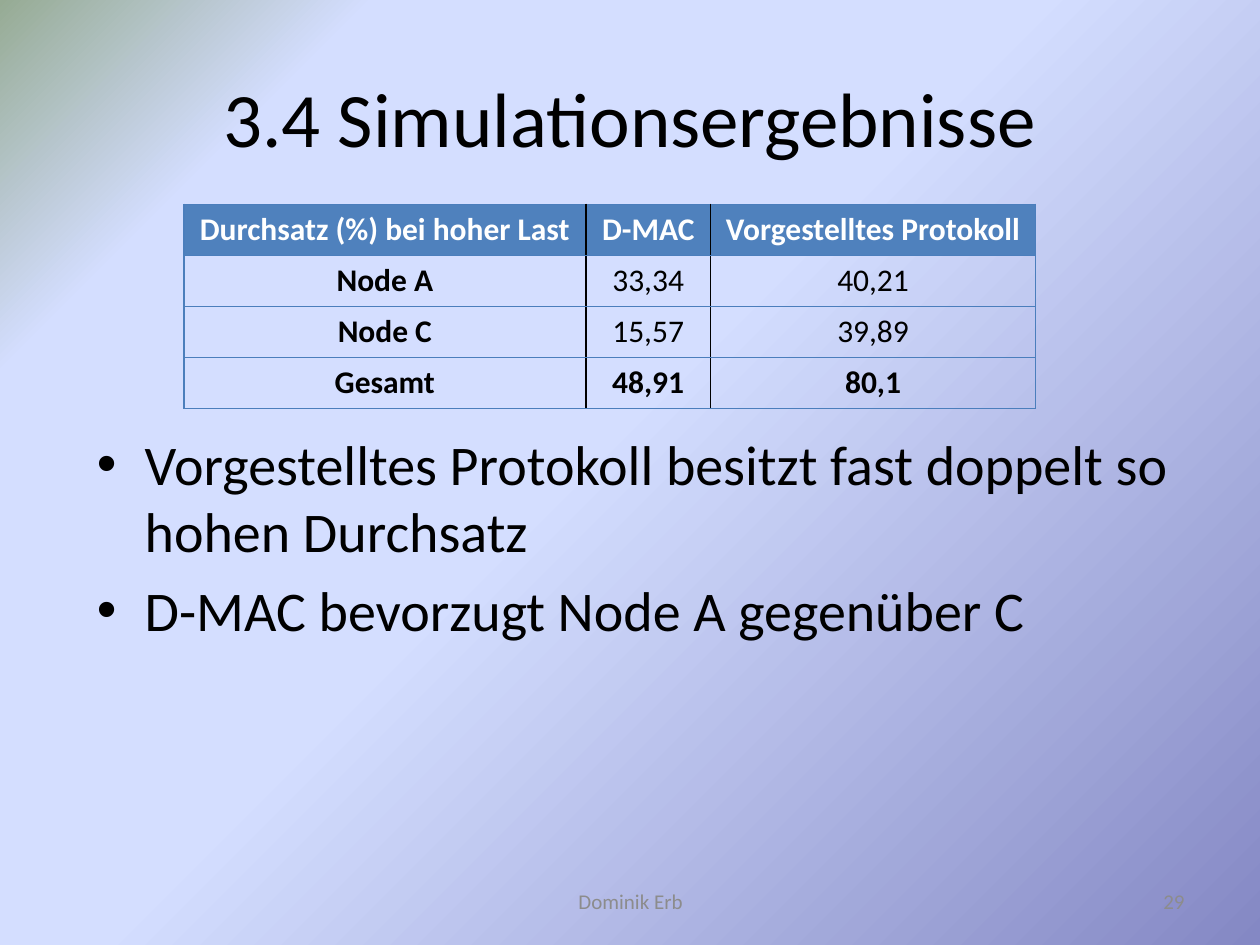
"""Build the slide with the simulation results table and its conclusions."""
from pptx import Presentation
from pptx.dml.color import RGBColor
from pptx.enum.text import MSO_ANCHOR, PP_ALIGN
from pptx.oxml import parse_xml
from pptx.oxml.ns import nsdecls
from pptx.util import Inches, Pt

BLACK = RGBColor(0x00, 0x00, 0x00)
WHITE = RGBColor(0xFF, 0xFF, 0xFF)
GRAY = RGBColor(0x8C, 0x8C, 0x8C)
HEADER_BLUE = RGBColor(0x4F, 0x81, 0xBD)
BORDER_BLUE = RGBColor(0x4B, 0x7E, 0xBC)
GRADIENT = [
    (0, RGBColor(0x84, 0x88, 0xC4)),
    (53, RGBColor(0xD4, 0xDE, 0xFF)),
    (83, RGBColor(0xD4, 0xDE, 0xFF)),
    (100, RGBColor(0x96, 0xAB, 0x94)),
]


def style(paragraph, size, color, alignment, bold=False):
    paragraph.alignment = alignment
    paragraph.font.name = "Calibri"
    paragraph.font.size = Pt(size)
    paragraph.font.color.rgb = color
    paragraph.font.bold = bold


def add_text(slide, box, lines, size, color, alignment, anchor):
    shape = slide.shapes.add_textbox(*[Inches(value) for value in box])
    frame = shape.text_frame
    frame.word_wrap = True
    frame.vertical_anchor = anchor
    frame.text = "\n".join(lines)
    for paragraph in frame.paragraphs:
        style(paragraph, size, color, alignment)
    return frame


presentation = Presentation()
presentation.slide_width = Inches(10)
presentation.slide_height = Inches(7.5)
slide = presentation.slides.add_slide(presentation.slide_layouts[6])

stops = "".join(
    f'<a:gs pos="{position * 1000}"><a:srgbClr val="{color}"/></a:gs>'
    for position, color in GRADIENT
)
background = parse_xml(
    f'<p:bg {nsdecls("p", "a")}><p:bgPr><a:gradFill rotWithShape="1">'
    f"<a:gsLst>{stops}</a:gsLst>"
    '<a:path path="circle"><a:fillToRect l="100000" t="100000"/></a:path>'
    "</a:gradFill><a:effectLst/></p:bgPr></p:bg>"
)
slide.element.cSld.insert(0, background)

add_text(slide, (0.5, 0.3, 9, 1.25), ["3.4 Simulationsergebnisse"],
         44, BLACK, PP_ALIGN.CENTER, MSO_ANCHOR.MIDDLE)

rows = [
    ("Durchsatz (%) bei hoher Last", "D-MAC", "Vorgestelltes Protokoll"),
    ("Node A", "33,34", "40,21"),
    ("Node C", "15,57", "39,89"),
    ("Gesamt", "48,91", "80,1"),
]
widths = [3.19, 0.99, 2.58]
last_row, last_column = len(rows) - 1, len(widths) - 1
table = slide.shapes.add_table(
    len(rows), len(widths), Inches(1.46), Inches(1.62),
    Inches(sum(widths)), Inches(1.62),
).table
table.horz_banding = False
for column, width in zip(table.columns, widths):
    column.width = Inches(width)

for row_index, row in enumerate(rows):
    for column_index, value in enumerate(row):
        cell = table.cell(row_index, column_index)
        cell.text = value
        is_header = row_index == 0
        is_bold = row_index in (0, last_row) or column_index == 0
        style(cell.text_frame.paragraphs[0], 18, WHITE if is_header else BLACK,
              PP_ALIGN.CENTER, is_bold)
        borders = {
            "lnL": column_index > 0,
            "lnR": column_index < last_column,
            "lnT": False,
            "lnB": False,
        }
        properties = cell._tc.get_or_add_tcPr()
        for tag, is_inner_vertical in borders.items():
            color, width = (BLACK, 1) if is_inner_vertical else (BORDER_BLUE, 0.75)
            properties.append(parse_xml(
                f'<a:{tag} {nsdecls("a")} w="{Pt(width)}"><a:solidFill>'
                f'<a:srgbClr val="{color}"/></a:solidFill></a:{tag}>'
            ))
        if is_header:
            cell.fill.solid()
            cell.fill.fore_color.rgb = HEADER_BLUE
        else:
            cell.fill.background()

conclusions = add_text(
    slide, (0.67, 3.36, 9, 3.4),
    ["Vorgestelltes Protokoll besitzt fast doppelt so hohen Durchsatz",
     "D-MAC bevorzugt Node A gegenüber C"],
    32, BLACK, PP_ALIGN.LEFT, MSO_ANCHOR.TOP,
)
for paragraph in conclusions.paragraphs:
    paragraph.space_before = Pt(6.4)
    properties = paragraph._p.get_or_add_pPr()
    properties.set("marL", str(Inches(0.38)))
    properties.set("indent", str(Inches(-0.38)))
    for bullet in ('buFont {} typeface="Arial"', 'buChar {} char="•"'):
        properties.insert_element_before(
            parse_xml(f"<a:{bullet.format(nsdecls('a'))}/>"),
            "a:tabLst", "a:defRPr", "a:extLst",
        )

add_text(slide, (3.42, 6.95, 3.17, 0.4), ["Dominik Erb"],
         12, GRAY, PP_ALIGN.CENTER, MSO_ANCHOR.MIDDLE)
add_text(slide, (7.17, 6.95, 2.33, 0.4), ["29"],
         12, GRAY, PP_ALIGN.RIGHT, MSO_ANCHOR.MIDDLE)

presentation.save("out.pptx")
